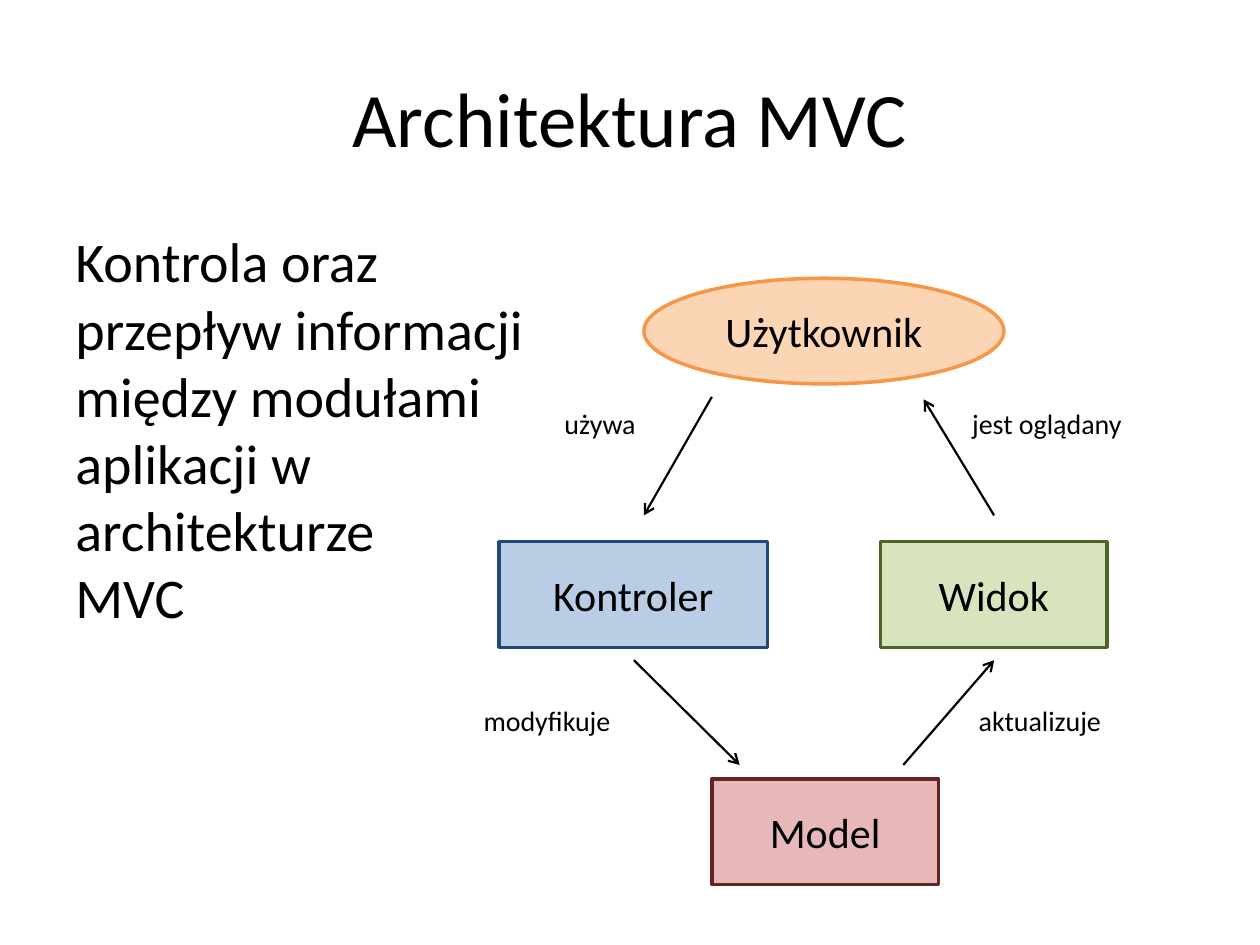
from lxml import etree
from pptx import Presentation
from pptx import util as u
from pptx.dml.color import RGBColor
from pptx.enum import shapes, text
from pptx.oxml.ns import qn

HUES = {
    "ink": "000000",
    "rose": "E6B9B8", "wine": "632523",
    "lime": "D7E4BD", "moss": "4F6228",
    "sky": "B9CDE5", "navy": "1F497D",
    "peach": "FCD5B5", "orange": "F79646",
}
RECT = shapes.MSO_SHAPE.RECTANGLE
OVAL = shapes.MSO_SHAPE.OVAL
LEFT, MID = text.PP_ALIGN.LEFT, text.PP_ALIGN.CENTER
NODE_H, LABEL_H = 2.13, 0.94

NODES = [
    (RECT, "Model", 14.35, 15.7, 4.57, "rose", "wine"),
    (RECT, "Widok", 17.75, 10.92, 4.57, "lime", "moss"),
    (RECT, "Kontroler", 10.06, 10.92, 5.41, "sky", "navy"),
    (OVAL, "Użytkownik", 12.98, 5.61, 7.26, "peach", "orange"),
]
FLOWS = [
    (18.21, 15.42, 20.04, 13.31),
    (12.78, 13.31, 14.91, 15.42),
    (14.35, 8, 12.98, 10.39),
    (20.04, 10.39, 18.62, 8.05),
]
LABELS = [
    ("aktualizuje", 19.48, 14.05, 3),
    ("modyfikuje", 9.5, 14.05, 3.1),
    ("używa", 11.13, 8.08, 1.98),
    ("jest oglądany", 19.35, 8.08, 3.56),
]
BODY = ["Kontrola oraz", "przepływ informacji", "między modułami",
        "aplikacji w", "architekturze", "MVC"]


def hue(name):
    """Return the named colour."""
    return RGBColor.from_string(HUES[name])


def cms(*nums):
    """Turn numbers into lengths in centimetres."""
    return [u.Cm(num) for num in nums]


def write(shape, lines, size, align):
    """Fill one paragraph with runs parted by line breaks."""
    para = shape.text_frame.paragraphs[0]
    para.alignment = align
    for pos, line in enumerate(lines):
        if pos:
            para.add_line_break()
        run = para.add_run()
        run.text = line
        run.font.name = "Calibri"
        run.font.size = u.Pt(size)
        run.font.color.rgb = hue("ink")


def add_text(slide, box, lines, size, align=LEFT,
             anchor=text.MSO_ANCHOR.TOP, wrap=True):
    """Add a text box."""
    shape = slide.shapes.add_textbox(*cms(*box))
    frame = shape.text_frame
    frame.word_wrap = wrap
    frame.vertical_anchor = anchor
    if not wrap:
        frame.auto_size = text.MSO_AUTO_SIZE.SHAPE_TO_FIT_TEXT
    write(shape, lines, size, align)


def add_node(slide, kind, name, left, top, width, fill, edge):
    """Add a filled and outlined part of the diagram."""
    shape = slide.shapes.add_shape(kind, *cms(left, top, width, NODE_H))
    shape.shadow.inherit = False
    shape.fill.solid()
    shape.fill.fore_color.rgb = hue(fill)
    shape.line.color.rgb = hue(edge)
    shape.line.width = u.Pt(2)
    shape.text_frame.vertical_anchor = text.MSO_ANCHOR.MIDDLE
    write(shape, [name], 24, MID)


def add_flow(slide, *ends):
    """Add a straight arrow."""
    line = slide.shapes.add_connector(shapes.MSO_CONNECTOR.STRAIGHT, *cms(*ends))
    line.line.color.rgb = hue("ink")
    line.line.width = u.Pt(1.25)
    etree.SubElement(line.line._get_or_add_ln(), qn("a:tailEnd"), type="arrow")
    etree.SubElement(line._element.spPr, qn("a:effectLst"))


def main():
    """Build and save the slide."""
    deck = Presentation()
    deck.slide_width, deck.slide_height = cms(25.4, 19.05)
    slide = deck.slides.add_slide(deck.slide_layouts[6])
    add_text(slide, (1.27, 0.76, 22.86, 3.18), ["Architektura MVC"], 44,
             MID, text.MSO_ANCHOR.MIDDLE)
    add_text(slide, (1.27, 4.45, 22.86, 12.57), BODY, 32)
    for node in NODES:
        add_node(slide, *node)
    for flow in FLOWS:
        add_flow(slide, *flow)
    for name, left, top, width in LABELS:
        add_text(slide, (left, top, width, LABEL_H), [name], 16, wrap=False)
    deck.save("out.pptx")


if __name__ == "__main__":
    main()
